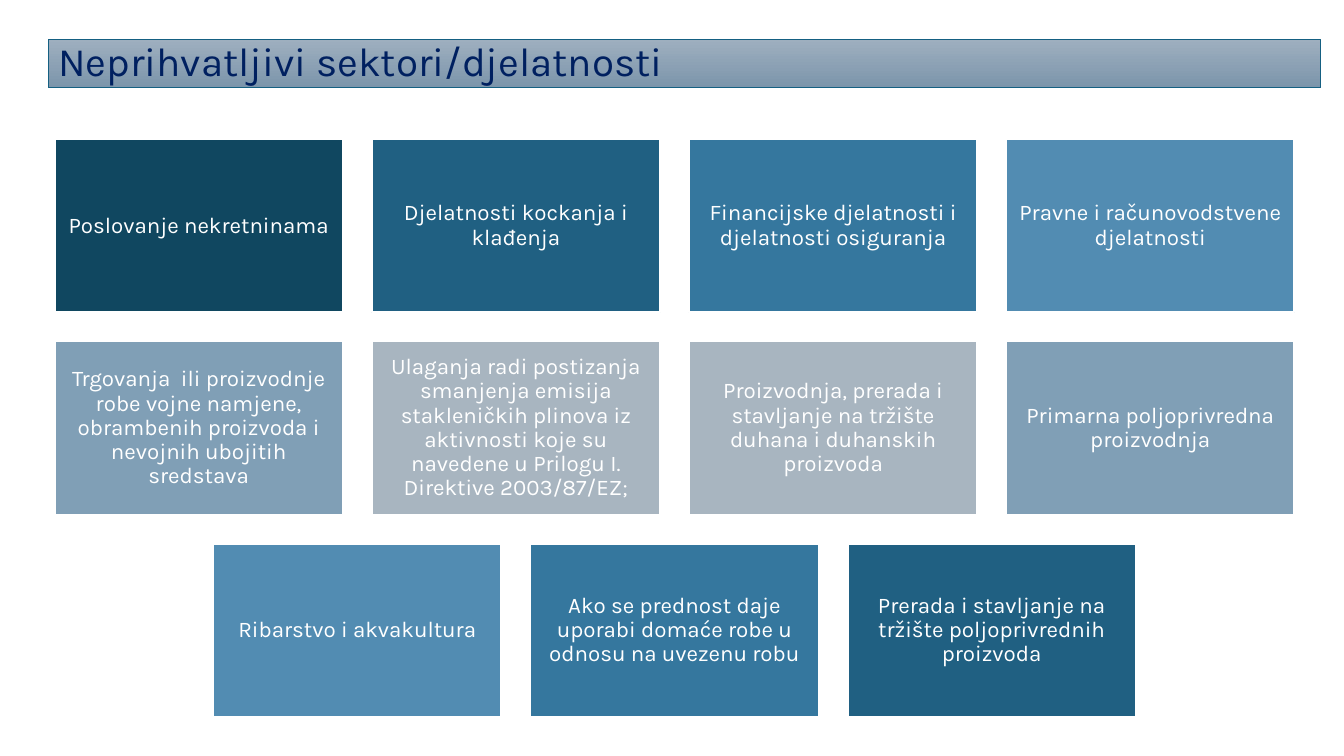
from pptx import Presentation
from pptx.dml.color import RGBColor
from pptx.enum.shapes import MSO_SHAPE
from pptx.enum.text import MSO_ANCHOR, PP_ALIGN
from pptx.util import Inches, Pt

RECTANGLE = MSO_SHAPE.RECTANGLE
MIDDLE = MSO_ANCHOR.MIDDLE
LEFT, CENTER = PP_ALIGN.LEFT, PP_ALIGN.CENTER

CARD_WIDTH, CARD_HEIGHT = 2.86, 1.72
GAP = CARD_WIDTH / 10
GRID_TOP, GRID_CENTER = 1.38, 6.69

# Fill and text of each card, row by row
CARD_ROWS = [
    [
        ("104760", "Poslovanje nekretninama"),
        ("206082", "Djelatnosti kockanja i klađenja"),
        ("35779E", "Financijske djelatnosti i djelatnosti osiguranja"),
        ("528CB2", "Pravne i računovodstvene djelatnosti"),
    ],
    [
        ("809FB6", "Trgovanja  ili proizvodnje robe vojne namjene, obrambenih "
                   "proizvoda i nevojnih ubojitih sredstava"),
        ("A8B5C0", "Ulaganja radi postizanja smanjenja emisija stakleničkih plinova "
                   "iz aktivnosti koje su navedene u Prilogu I. Direktive 2003/87/EZ;"),
        ("A8B5C0", "Proizvodnja, prerada i stavljanje na tržište duhana i duhanskih "
                   "proizvoda"),
        ("809FB6", "Primarna poljoprivredna proizvodnja"),
    ],
    [
        ("528CB2", "Ribarstvo i akvakultura"),
        ("35779E", "Ako se prednost daje uporabi domaće robe u odnosu na uvezenu robu"),
        ("206082", "Prerada i stavljanje na tržište poljoprivrednih proizvoda"),
    ],
]


def color(hex_code):
    return RGBColor.from_string(hex_code)


def add_box(left, top, width, height, text, size, text_color, alignment, line_color, line_width):
    shape = slide.shapes.add_shape(
        RECTANGLE, Inches(left), Inches(top), Inches(width), Inches(height))
    shape.shadow.inherit = False
    shape.line.color.rgb = color(line_color)
    shape.line.width = Pt(line_width)
    text_frame = shape.text_frame
    text_frame.text = text
    text_frame.word_wrap = True
    text_frame.vertical_anchor = MIDDLE
    paragraph = text_frame.paragraphs[0]
    paragraph.alignment = alignment
    paragraph.line_spacing = 0.9
    font = paragraph.runs[0].font
    font.name = "Karla"
    font.size = Pt(size)
    font.color.rgb = color(text_color)
    return shape


presentation = Presentation()
presentation.slide_width = Inches(13.33)
presentation.slide_height = Inches(7.5)
slide = presentation.slides.add_slide(presentation.slide_layouts[6])

# Title bar with a gradient from top to bottom
title = add_box(0.48, 0.39, 12.62, 0.48, "Neprihvatljivi sektori/djelatnosti",
                28.8, "002060", LEFT, "156082", 1)
title.fill.gradient()
title.fill.gradient_angle = 270
for stop, stop_color in zip(title.fill.gradient_stops, ("9EAFBF", "7C95AB")):
    stop.color.rgb = color(stop_color)

# Cards, each row centred on the grid
for row, cards in enumerate(CARD_ROWS):
    row_width = len(cards) * (CARD_WIDTH + GAP) - GAP
    row_left = GRID_CENTER - row_width / 2
    top = GRID_TOP + row * (CARD_HEIGHT + GAP)
    for column, (fill_color, text) in enumerate(cards):
        left = row_left + column * (CARD_WIDTH + GAP)
        card = add_box(left, top, CARD_WIDTH, CARD_HEIGHT, text,
                       16, "FFFFFF", CENTER, "FFFFFF", 1.5)
        card.fill.solid()
        card.fill.fore_color.rgb = color(fill_color)
        text_frame = card.text_frame
        text_frame.margin_left = text_frame.margin_right = Inches(0.07)
        text_frame.margin_top = text_frame.margin_bottom = Inches(0.07)

presentation.save("out.pptx")
